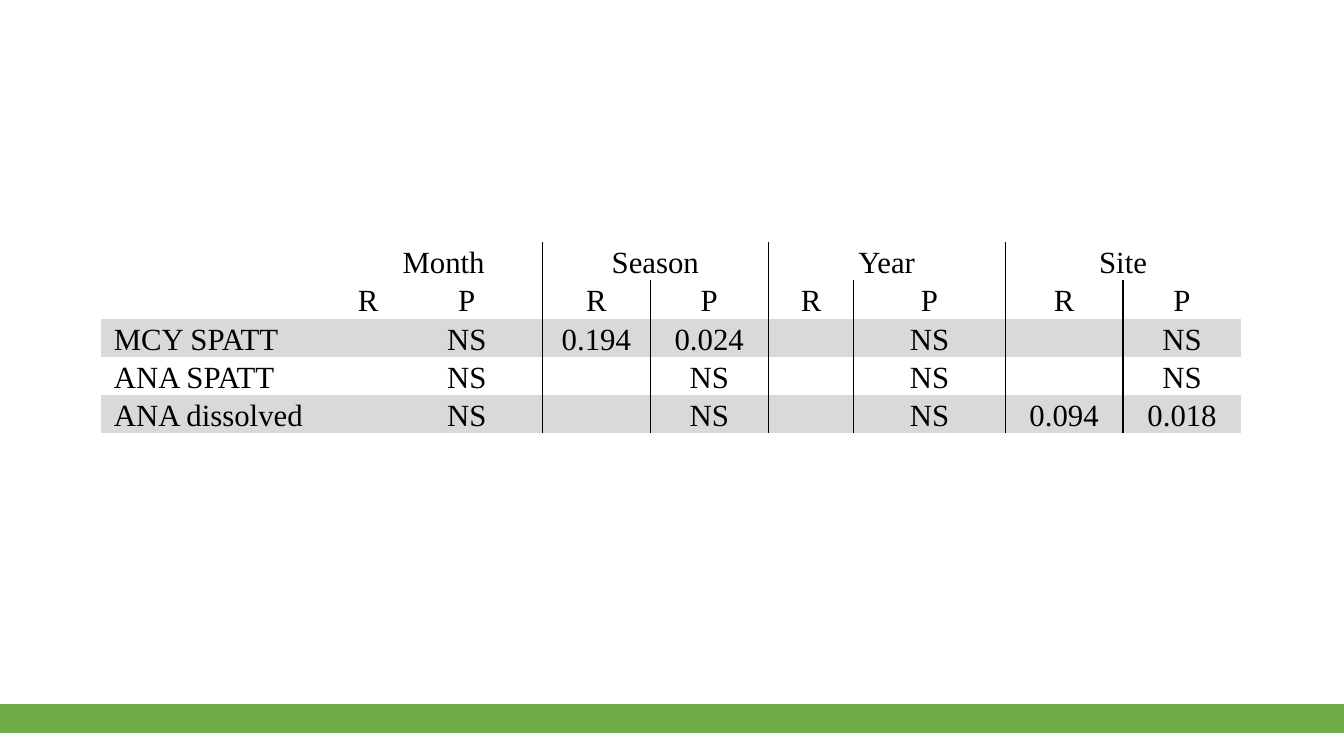
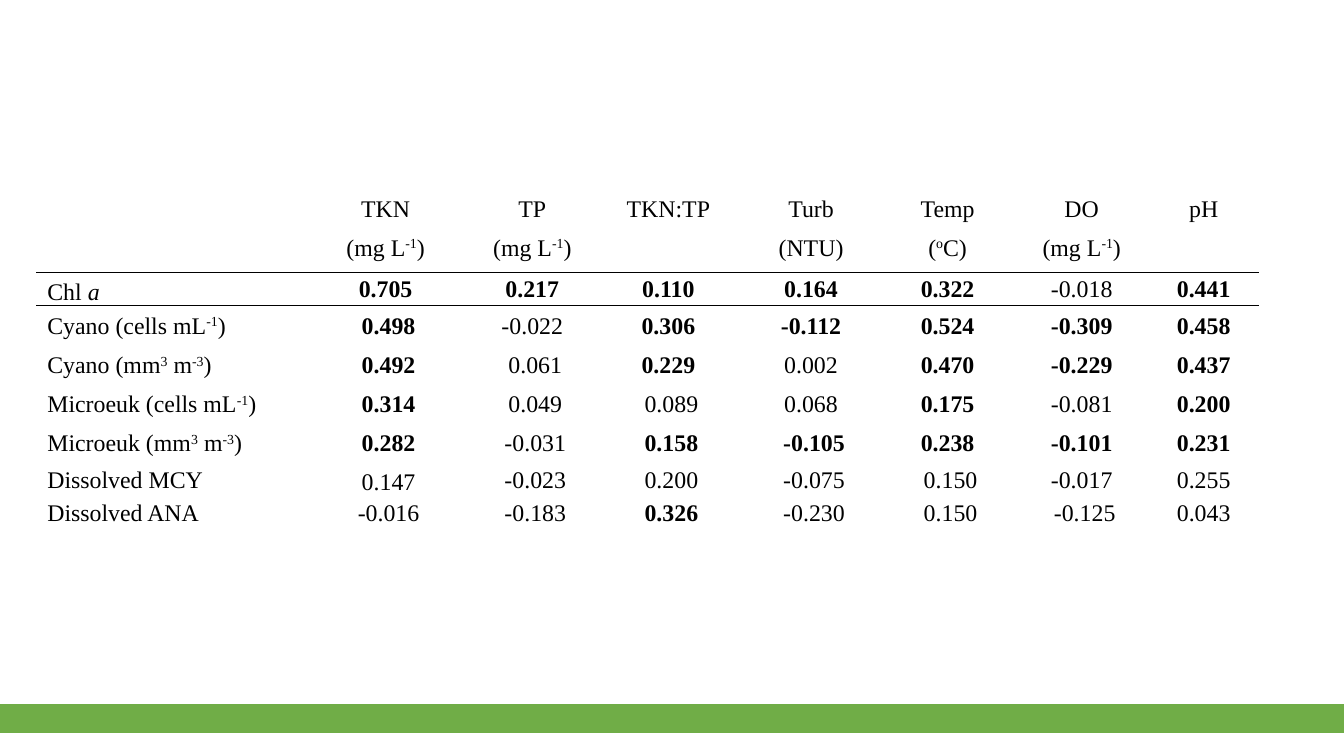
from lxml import etree
from pptx import Presentation
from pptx.dml.color import RGBColor
from pptx.enum import shapes, text
from pptx.oxml import ns
from pptx.util import Inches, Pt

COLORS = {"band": "70AD47", "stripe": "D9D9D9", "white": "FFFFFF", "ink": "000000"}
FONT = "Times New Roman"
LINE_SPACING = 1.07
NO_STYLE = "{2D5ABB26-0587-4C30-8999-92F81FD0307C}"
NBSP = chr(160)

BOTTOM, MIDDLE, TOP = (text.MSO_ANCHOR.BOTTOM, text.MSO_ANCHOR.MIDDLE,
                       text.MSO_ANCHOR.TOP)

# Cell markup: leading * is bold, ^...^ superscript, _..._ italic, ~ a no-break space.
similarity = {
    "at": (1, 2.4), "size": 22, "inset": 0.13,
    "widths": [2.42, 0.46, 1.5, 1.07, 1.17, 0.85, 1.5, 1.17, 1.17],
    "heights": [0.38] * 5,
    "rows": [
        ["", "Month", "", "Season", "", "Year", "", "Site", ""],
        [""] + ["R", "P"] * 4,
        ["MCY SPATT", "", "NS", "0.194", "0.024", "", "NS", "", "NS"],
        ["ANA SPATT"] + ["", "NS"] * 4,
        ["ANA dissolved", "", "NS", "", "NS", "", "NS", "0.094", "0.018"],
    ],
    "merges": [(0, column) for column in (1, 3, 5, 7)],
    "fills": [None, None, "stripe", None, "stripe"],
    "anchors": [BOTTOM] * 5,
    "bottom_cells": [],
    "rules_after_columns": [2, 4, 6],
    "rules_after_rows": [],
}
correlation = {
    "at": (0.36, 1.93), "size": 17, "inset": 0.11,
    "widths": [2.63, 1.67, 1.24, 1.46, 1.37, 1.34, 1.32, 1.1],
    "heights": [0.38, 0.39, 0.33, 0.39, 0.39, 0.39, 0.39, 0.33, 0.33],
    "rows": [
        ["", "TKN", "TP", "TKN:TP", "Turb", "Temp", "DO", "pH"],
        ["", "(mg L^-1^)", "(mg L^-1^)", "", "(NTU)", "(^o^C)", "(mg L^-1^)", ""],
        ["Chl _a_", "*0.705", "*0.217", "*0.110", "*0.164", "*0.322", "-0.018",
         "*0.441"],
        ["Cyano (cells mL^-1^)", "*~0.498", "-0.022", "*0.306", "*-0.112", "*0.524",
         "*-0.309", "*0.458"],
        ["Cyano (mm^3^ m^-3^)", "*~0.492", "~0.061", "*0.229", "0.002", "*0.470",
         "*-0.229", "*0.437"],
        ["Microeuk (cells mL^-1^)", "*~0.314", "~0.049", "~0.089", "0.068", "*0.175",
         "-0.081", "*0.200"],
        ["Microeuk (mm^3^ m^-3^)", "*~0.282", "~-0.031", "*~0.158", "*~-0.105",
         "*0.238", "*-0.101", "*0.231"],
        ["Dissolved MCY", "~0.147", "~-0.023", "~0.200", "~-0.075", "~0.150",
         "-0.017", "0.255"],
        ["Dissolved ANA", "~-0.016", "~-0.183", "*~0.326", "~-0.230", "~0.150",
         "~-0.125", "0.043"],
    ],
    "merges": [],
    "fills": ["white"] * 9,
    "anchors": [TOP] * 2 + [MIDDLE] * 7,
    "bottom_cells": [(2, 0), (7, 1)],
    "rules_after_columns": [],
    "rules_after_rows": [1],
}


def add_border(cell, side):
    """Draw a 1 pt line on one side (L, R, T or B); call in that order, before the fill."""
    properties = cell._tc.get_or_add_tcPr()
    line = etree.SubElement(properties, ns.qn("a:ln" + side), w=str(Pt(1)))
    fill = etree.SubElement(line, ns.qn("a:solidFill"))
    etree.SubElement(fill, ns.qn("a:srgbClr"), val=COLORS["ink"])


def write_markup(para, markup, size):
    bold = markup.startswith("*")
    plain = markup.lstrip("*").replace("~", NBSP)
    for level, piece in enumerate(plain.split("^")):
        for slant, words in enumerate(piece.split("_")):
            if not words:
                continue
            span = para.add_run()
            span.text = words
            span.font.name = FONT
            span.font.size = Pt(size)
            span.font.bold = bold
            span.font.italic = slant % 2 == 1
            span.font.color.rgb = RGBColor.from_string(COLORS["ink"])
            if level % 2:
                span.font._element.set("baseline", "30000")


deck = Presentation()
deck.slide_width, deck.slide_height = Inches(13.33), Inches(7.5)

for design in (similarity, correlation):
    page = deck.slides.add_slide(deck.slide_layouts[6])

    band = page.shapes.add_shape(shapes.MSO_SHAPE.RECTANGLE, 0, Inches(6.99),
                                 deck.slide_width, Inches(0.28))
    band.shadow.inherit = False
    band.fill.solid()
    band.fill.fore_color.rgb = RGBColor.from_string(COLORS["band"])
    band.line.color.rgb = RGBColor.from_string(COLORS["band"])
    band.line.width = Pt(1)

    widths, heights = design["widths"], design["heights"]
    left, top = design["at"]
    table = page.shapes.add_table(len(heights), len(widths), Inches(left), Inches(top),
                                  Inches(sum(widths)), Inches(sum(heights))).table
    table.first_row = table.horz_banding = False
    table._tbl.tblPr.find(ns.qn("a:tableStyleId")).text = NO_STYLE
    for column, width in zip(table.columns, widths):
        column.width = Inches(width)
    for row, height in zip(table.rows, heights):
        row.height = Inches(height)
    for row, column in design["merges"]:
        table.cell(row, column).merge(table.cell(row, column + 1))

    for row, markups in enumerate(design["rows"]):
        for column, markup in enumerate(markups):
            cell = table.cell(row, column)
            cell.margin_left = cell.margin_right = Inches(design["inset"])
            cell.margin_top = cell.margin_bottom = 0
            at_bottom = (row, column) in design["bottom_cells"]
            cell.vertical_anchor = BOTTOM if at_bottom else design["anchors"][row]

            last_column = column + 1 if (row, column) in design["merges"] else column
            borders = {
                "L": column - 1 in design["rules_after_columns"],
                "R": last_column in design["rules_after_columns"],
                "T": row - 1 in design["rules_after_rows"],
                "B": row in design["rules_after_rows"],
            }
            for side, drawn in borders.items():
                if drawn:
                    add_border(cell, side)

            fill = design["fills"][row]
            if fill:
                cell.fill.solid()
                cell.fill.fore_color.rgb = RGBColor.from_string(COLORS[fill])
            else:
                cell.fill.background()

            if markup:
                para = cell.text_frame.paragraphs[0]
                para.line_spacing = LINE_SPACING
                para.alignment = text.PP_ALIGN.CENTER if column else text.PP_ALIGN.LEFT
                write_markup(para, markup, design["size"])

deck.save("out.pptx")
